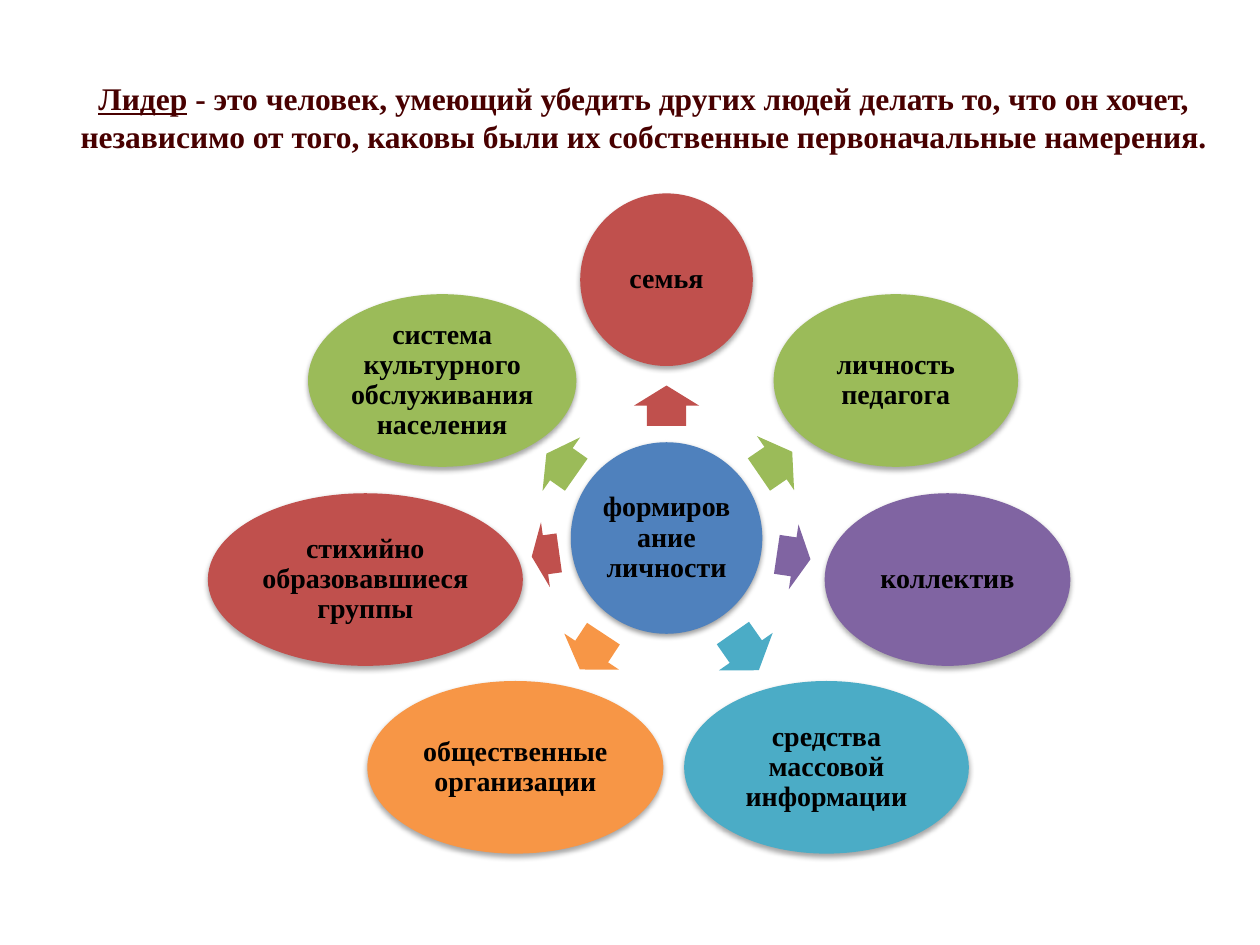
from math import atan2, cos, degrees, sin
from lxml.etree import SubElement
from pptx import Presentation
from pptx.dml.color import RGBColor
from pptx.enum.shapes import MSO_SHAPE
from pptx.enum.text import MSO_ANCHOR, PP_ALIGN
from pptx.oxml.ns import qn
from pptx.util import Inches, Pt

FONT = "Times New Roman"
BLACK = RGBColor(0x00, 0x00, 0x00)
MAROON = RGBColor(0x48, 0x00, 0x00)
BLUE = RGBColor(0x4F, 0x81, 0xBD)
RED = RGBColor(0xC0, 0x50, 0x4D)
GREEN = RGBColor(0x9B, 0xBB, 0x59)
PURPLE = RGBColor(0x80, 0x64, 0xA2)
TEAL = RGBColor(0x4B, 0xAC, 0xC6)
ORANGE = RGBColor(0xF7, 0x96, 0x46)

TERM = "Лидер"
MEANING = (" - это человек, умеющий убедить других людей делать то, что он хочет, "
           "независимо от того, каковы были их собственные первоначальные намерения.")
HUB = "формирование личности"
HUB_X, HUB_Y, HUB_SIZE = 5.29, 4.27, 1.52
OVAL_H, ARROW_H = 1.37, 0.52

# text, colour, centre x, centre y, width, arrow distance from hub, arrow length
FACTORS = [
    ("семья", RED, 5.29, 2.22, 1.37, 1.05, 0.32),
    ("личность педагога", GREEN, 7.11, 3.02, 1.94, 1.05, 0.32),
    ("коллектив", PURPLE, 7.52, 4.6, 1.95, 1.02, 0.27),
    ("средства массовой информации", TEAL, 6.56, 6.09, 2.26, 1.1, 0.36),
    ("общественные организации", ORANGE, 4.09, 6.09, 2.35, 1.08, 0.34),
    ("стихийно образовавшиеся группы", RED, 2.9, 4.6, 2.5, 0.97, 0.22),
    ("система культурного обслуживания населения", GREEN, 3.51, 3.02, 2.13, 1.02, 0.29),
]


def set_font(font, size, color):
    font.name = FONT
    font.size = Pt(size)
    font.bold = True
    font.color.rgb = color


def add_form(slide, kind, x, y, w, h, color):
    form = slide.shapes.add_shape(
        kind, Inches(x - w / 2), Inches(y - h / 2), Inches(w), Inches(h))
    form.shadow.inherit = False
    form.fill.solid()
    form.fill.fore_color.rgb = color
    form.line.fill.background()
    return form


def add_shadow(form, gap, alpha):
    effects = form._element.spPr.find(qn("a:effectLst"))
    shadow = SubElement(effects, qn("a:outerShdw"), blurRad=str(Pt(3.1)),
                        dist=str(Pt(gap)), dir="5400000", rotWithShape="0")
    color = SubElement(shadow, qn("a:srgbClr"), val=str(BLACK))
    SubElement(color, qn("a:alpha"), val=str(alpha * 1000))


def add_oval(slide, text, color, x, y, w, h, gap=1.8, alpha=35):
    oval = add_form(slide, MSO_SHAPE.OVAL, x, y, w, h, color)
    add_shadow(oval, gap, alpha)
    frame = oval.text_frame
    frame.word_wrap = True
    frame.vertical_anchor = MSO_ANCHOR.MIDDLE
    frame.margin_left = frame.margin_right = Inches(0.02)
    frame.margin_top = frame.margin_bottom = Inches(0.02)
    para = frame.paragraphs[0]
    para.text = text
    para.alignment = PP_ALIGN.CENTER
    para.line_spacing = 0.9
    set_font(para.font, 16, BLACK)


def add_arrow(slide, color, angle, reach, length):
    arrow = add_form(slide, MSO_SHAPE.RIGHT_ARROW, HUB_X + reach * cos(angle),
                     HUB_Y + reach * sin(angle), length, ARROW_H, color)
    arrow.adjustments[0] = 0.6
    arrow.adjustments[1] = 0.5
    arrow.rotation = degrees(angle) % 360


def add_title(slide):
    box = slide.shapes.add_textbox(Inches(0.5), Inches(0.3), Inches(9.22), Inches(1.25))
    frame = box.text_frame
    frame.word_wrap = True
    frame.vertical_anchor = MSO_ANCHOR.MIDDLE
    para = frame.paragraphs[0]
    para.alignment = PP_ALIGN.CENTER
    set_font(para.font, 18, MAROON)
    term = para.add_run()
    term.text = TERM
    term.font.underline = True
    para.add_run().text = MEANING


def main():
    deck = Presentation()
    deck.slide_width, deck.slide_height = Inches(10), Inches(7.5)
    slide = deck.slides.add_slide(deck.slide_layouts[6])
    add_title(slide)
    add_oval(slide, HUB, BLUE, HUB_X, HUB_Y, HUB_SIZE, HUB_SIZE, 1.6, 38)
    for text, color, x, y, width, reach, length in FACTORS:
        add_arrow(slide, color, atan2(y - HUB_Y, x - HUB_X), reach, length)
        add_oval(slide, text, color, x, y, width, OVAL_H)
    deck.save("out.pptx")


if __name__ == "__main__":
    main()
